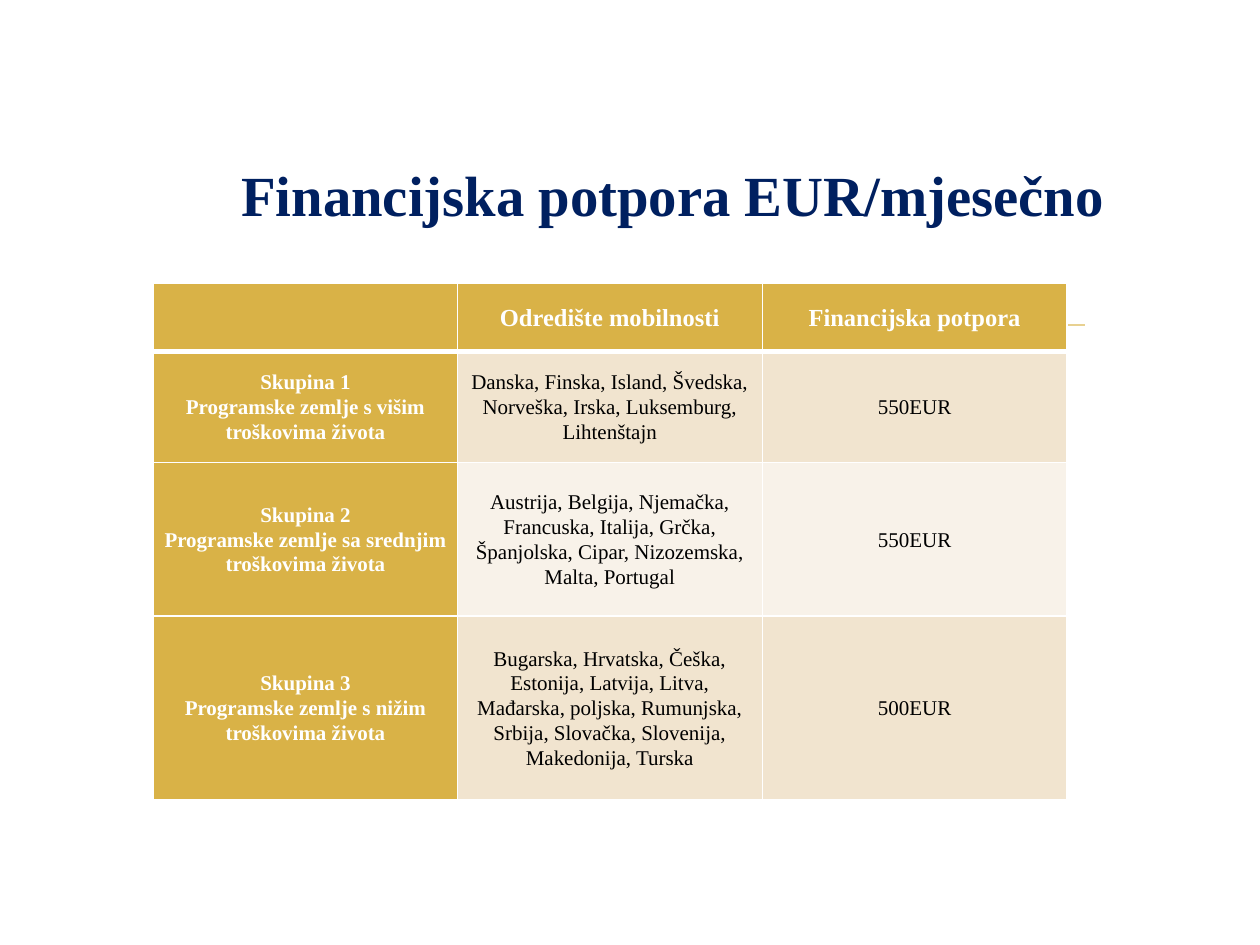
from dataclasses import dataclass

from lxml.etree import SubElement
from pptx import Presentation
from pptx.dml.color import RGBColor
from pptx.enum.text import MSO_ANCHOR, MSO_AUTO_SIZE, PP_ALIGN
from pptx.oxml.ns import qn
from pptx.util import Inches, Pt


@dataclass(frozen=True)
class Theme:
    """Fonts, type sizes and colours of the slide."""

    font: str = "Times New Roman"
    title_size: float = 32.4
    header_size: float = 14
    body_size: float = 12
    navy: str = "002060"
    gold: str = "D9B247"
    pale_gold: str = "E8D191"
    dark_band: str = "F1E4CF"
    light_band: str = "F8F2E9"
    white: str = "FFFFFF"
    black: str = "000000"


class SlideBuilder:
    """Adds styled elements to the current slide."""

    def __init__(self, slide, theme):
        """Keep the slide and its theme."""
        self.slide = slide
        self.theme = theme

    def add_run(self, paragraph, text, size, color, bold):
        """Add one formatted run to a centred paragraph."""
        paragraph.alignment = PP_ALIGN.CENTER
        run = paragraph.add_run()
        run.text = text
        run.font.name = self.theme.font
        run.font.size = Pt(size)
        run.font.bold = bold
        run.font.color.rgb = RGBColor.from_string(color)

    def add_rule(self, left, right, top):
        """Draw a thin horizontal rule."""
        rule = self.slide.shapes.add_connector(
            1, Inches(left), Inches(top), Inches(right), Inches(top)
        )
        rule.line.color.rgb = RGBColor.from_string(self.theme.pale_gold)
        rule.line.width = Pt(1.25)
        SubElement(rule._element.spPr, qn("a:effectLst"))

    def add_title(self, text, left, top, width, height):
        """Place the title at the top of its placeholder."""
        title = self.slide.shapes.title
        title.left, title.top = Inches(left), Inches(top)
        title.width, title.height = Inches(width), Inches(height)
        frame = title.text_frame
        frame.word_wrap = True
        frame.auto_size = MSO_AUTO_SIZE.NONE
        frame.vertical_anchor = MSO_ANCHOR.TOP
        frame.margin_left, frame.margin_top = Inches(0.78), Inches(0.2)
        self.add_run(
            frame.paragraphs[0], text, self.theme.title_size, self.theme.navy, True
        )

    def add_borders(self, cell, widths):
        """Give a cell white borders, widths in order left, right, top, bottom."""
        properties = cell._tc.get_or_add_tcPr()
        for side, width in zip("LRTB", widths):
            border = SubElement(properties, qn(f"a:ln{side}"), w=str(Pt(width)))
            fill = SubElement(border, qn("a:solidFill"))
            SubElement(fill, qn("a:srgbClr"), val=self.theme.white)

    def fill_cell(self, cell, text, row, column):
        """Style one table cell by its place in the grid."""
        theme = self.theme
        heading = row == 0 or column == 0
        band = theme.dark_band if row % 2 else theme.light_band
        self.add_borders(cell, (1, 1, 3 if row == 1 else 1, 3 if row == 0 else 1))
        cell.fill.solid()
        cell.fill.fore_color.rgb = RGBColor.from_string(
            theme.gold if heading else band
        )
        cell.vertical_anchor = MSO_ANCHOR.MIDDLE
        cell.margin_left = cell.margin_right = Inches(0.07)
        cell.margin_top = cell.margin_bottom = 0
        if not text:
            return
        frame = cell.text_frame
        for index, line in enumerate(text.split("\n")):
            paragraph = frame.add_paragraph() if index else frame.paragraphs[0]
            paragraph.line_spacing = 1.07
            self.add_run(
                paragraph,
                line,
                theme.body_size if row else theme.header_size,
                theme.white if heading else theme.black,
                heading,
            )

    def add_table(self, rows, left, top, widths, heights):
        """Add a table with a gold header row and first column."""
        table = self.slide.shapes.add_table(
            len(rows), len(widths), Inches(left), Inches(top),
            Inches(sum(widths)), Inches(sum(heights)),
        ).table
        for column, width in zip(table.columns, widths):
            column.width = Inches(width)
        for row, height in zip(table.rows, heights):
            row.height = Inches(height)
        for row, texts in enumerate(rows):
            for column, text in enumerate(texts):
                self.fill_cell(table.cell(row, column), text, row, column)


ROWS = [
    ("", "Odredište mobilnosti", "Financijska potpora"),
    (
        "Skupina 1\nProgramske zemlje s višim troškovima života",
        "Danska, Finska, Island, Švedska, Norveška, Irska, Luksemburg, Lihtenštajn",
        "550EUR",
    ),
    (
        "Skupina 2\nProgramske zemlje sa srednjim troškovima života",
        "Austrija, Belgija, Njemačka, Francuska, Italija, Grčka, Španjolska, "
        "Cipar, Nizozemska, Malta, Portugal",
        "550EUR",
    ),
    (
        "Skupina 3\nProgramske zemlje s nižim troškovima života",
        "Bugarska, Hrvatska, Češka, Estonija, Latvija, Litva, Mađarska, poljska, "
        "Rumunjska, Srbija, Slovačka, Slovenija, Makedonija, Turska",
        "500EUR",
    ),
]


def main():
    """Build and save the presentation."""
    presentation = Presentation()
    presentation.slide_width, presentation.slide_height = Inches(10), Inches(7.5)
    slide = presentation.slides.add_slide(presentation.slide_layouts[5])
    builder = SlideBuilder(slide, Theme())
    builder.add_rule(1.4, 8.61, 2.58)
    builder.add_title("Financijska potpora EUR/mjesečno", 0.5, 1.07, 9, 3.39)
    builder.add_table(
        ROWS, 1.22, 2.25, (2.41, 2.42, 2.42), (0.54, 0.88, 1.22, 1.46)
    )
    presentation.save("out.pptx")


if __name__ == "__main__":
    main()
